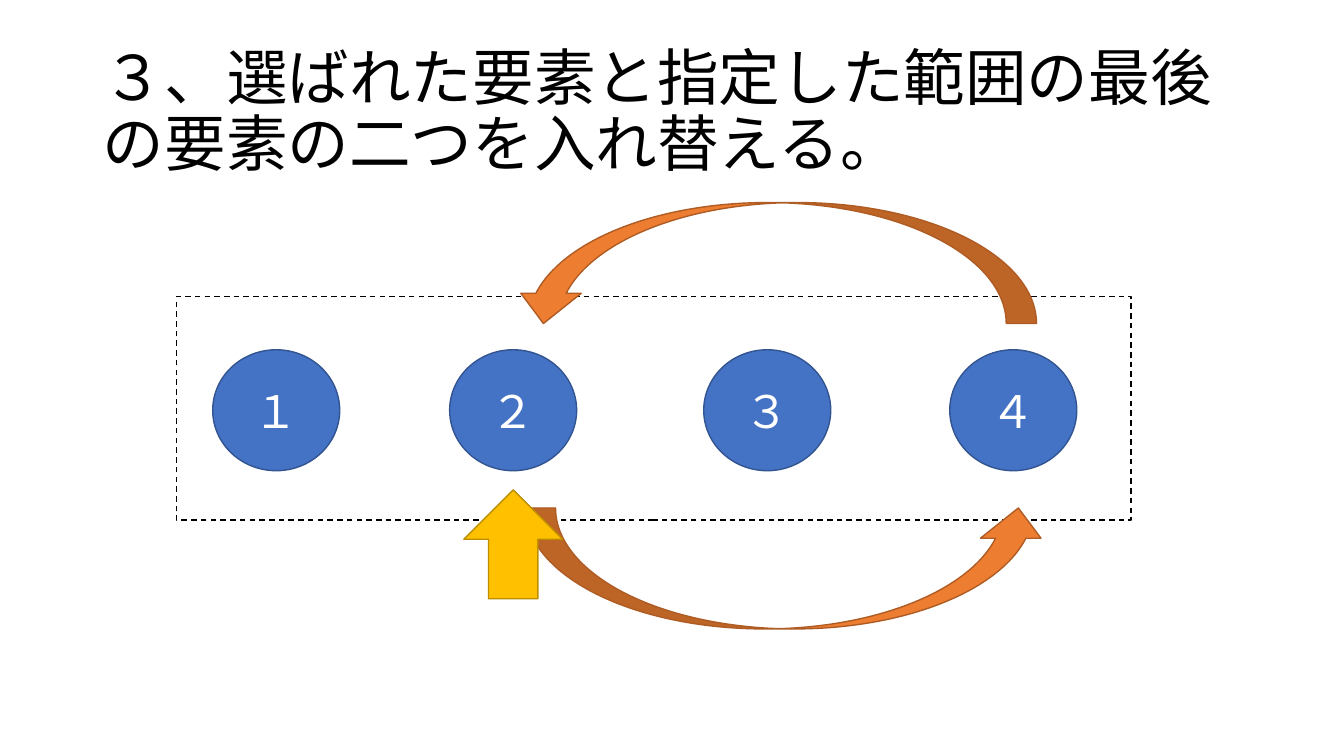
from dataclasses import dataclass

from lxml import etree
from pptx import Presentation
from pptx.dml.color import RGBColor as RGB
from pptx.enum.dml import MSO_LINE_DASH_STYLE as DASH
from pptx.enum.shapes import MSO_SHAPE as SHAPE
from pptx.enum.text import MSO_ANCHOR as ANCHOR, PP_ALIGN as ALIGN
from pptx.oxml.ns import qn
from pptx.util import Inches, Pt


@dataclass(frozen=True)
class Theme:
    font: str = "Noto Sans CJK JP"
    title_size: int = 44
    number_size: int = 32
    line_width: int = 1
    black: str = "000000"
    white: str = "FFFFFF"
    blue: str = "4472C4"
    blue_line: str = "325491"
    orange: str = "ED7D31"
    orange_line: str = "AF5C24"
    gold: str = "FFC000"
    gold_line: str = "BD8E00"


T = Theme()


def format_text(tf, size, color, align):
    tf.word_wrap = True
    tf.vertical_anchor = ANCHOR.MIDDLE
    for p in tf.paragraphs:
        p.alignment = align
        for r in p.runs:
            r.font.name = T.font
            r.font.size = Pt(size)
            r.font.color.rgb = RGB.from_string(color)
            # East Asian typeface
            ea = etree.SubElement(r.font._element, qn("a:ea"))
            ea.set("typeface", T.font)


def add_shape(s, kind, box, fill, line, flip=None):
    sp = s.shapes.add_shape(kind, *(Inches(v) for v in box))
    sp.shadow.inherit = False
    sp.fill.solid()
    sp.fill.fore_color.rgb = RGB.from_string(fill)
    sp.line.color.rgb = RGB.from_string(line)
    sp.line.width = Pt(T.line_width)
    if flip:
        sp.element.spPr.find(qn("a:xfrm")).set(flip, "1")
    return sp


def add_title(s, box, text):
    title = s.shapes.title
    title.left, title.top, title.width, title.height = (Inches(v) for v in box)
    tf = title.text_frame
    tf.text = text
    tf.paragraphs[0].line_spacing = 0.9
    format_text(tf, T.title_size, T.black, ALIGN.LEFT)


def add_elements(s, box):
    """Dashed range with its numbered elements."""
    left, top, _, _ = box
    frame = add_shape(s, SHAPE.RECTANGLE, box, T.white, T.black)
    frame.line.dash_style = DASH.DASH
    offsets = {"１": 0.36, "２": 2.71, "３": 5.23, "４": 7.67}
    for number, dx in offsets.items():
        circle = add_shape(s, SHAPE.FLOWCHART_CONNECTOR,
                           (left + dx, top + 0.53, 1.26, 1.2), T.blue, T.blue_line)
        circle.text_frame.text = number
        format_text(circle.text_frame, T.number_size, T.white, ALIGN.CENTER)


def add_swap_arrows(s, box):
    """Curved arrows above and below the range, and the selection marker."""
    left, top, _, height = box
    w, h = 5.19, 1.2
    arcs = [(left + 3.34, top - 0.93, "flipH"),
            (left + 3.46, top + height - 0.12, "flipV")]
    for x, y, flip in arcs:
        add_shape(s, SHAPE.CURVED_DOWN_ARROW, (x, y, w, h),
                  T.orange, T.orange_line, flip)
    add_shape(s, SHAPE.UP_ARROW, (left + 2.85, top + height - 0.3, 0.98, 1.08),
              T.gold, T.gold_line)


def main():
    prs = Presentation()
    prs.slide_width, prs.slide_height = Inches(13.33), Inches(7.5)
    s = prs.slides.add_slide(prs.slide_layouts[5])
    range_box = (1.75, 2.94, 9.47, 2.22)
    add_title(s, (0.92, 0.4, 11.5, 1.45),
              "３、選ばれた要素と指定した範囲の最後の要素の二つを入れ替える。")
    add_elements(s, range_box)
    add_swap_arrows(s, range_box)
    prs.save("out.pptx")


if __name__ == "__main__":
    main()
